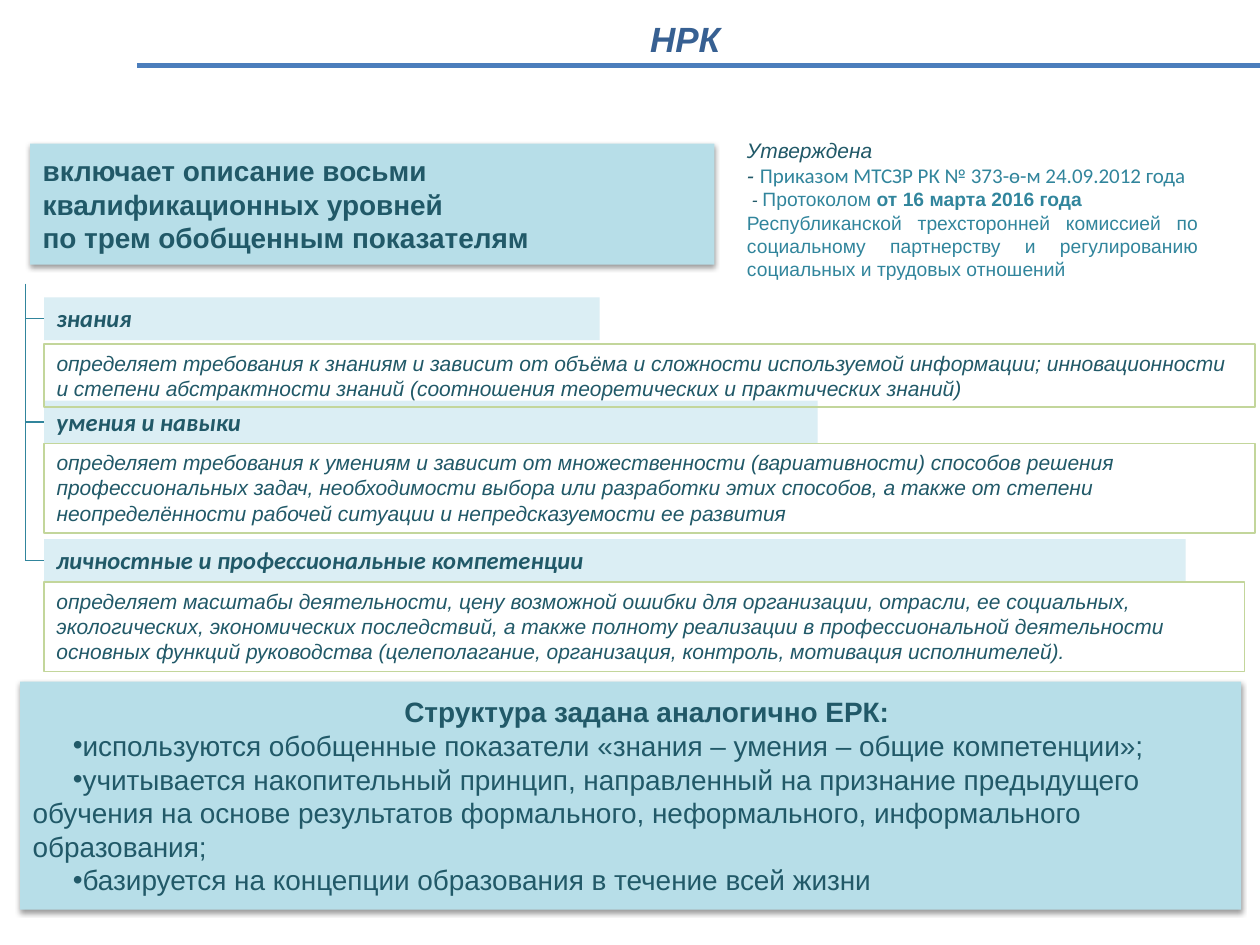
from typing import NamedTuple, Optional

from lxml.etree import SubElement
from pptx import Presentation
from pptx.dml.color import RGBColor
from pptx.enum.shapes import MSO_CONNECTOR, MSO_SHAPE
from pptx.enum.text import MSO_ANCHOR, PP_ALIGN
from pptx.oxml.ns import qn
from pptx.util import Inches, Pt

DARK_TEAL = RGBColor(0x21, 0x59, 0x68)
TEAL = RGBColor(0x31, 0x85, 0x9C)
PANEL = RGBColor(0xB7, 0xDE, 0xE8)
PALE = RGBColor(0xDB, 0xEE, 0xF4)
GREEN = RGBColor(0xC3, 0xD6, 0x9B)
RULE_BLUE = RGBColor(0x4B, 0x7E, 0xBC)
TITLE_BLUE = RGBColor(0x37, 0x60, 0x92)

LEFT, TRUNK_X, HEADER_H = 0.35, 0.2, 0.34


class Box(NamedTuple):
    left: float
    top: float
    width: float
    height: float


class Run(NamedTuple):
    text: str
    size: float
    color: RGBColor = DARK_TEAL
    bold: bool = False
    italic: bool = False
    font: str = "Arial"


class Para(NamedTuple):
    runs: list[Run]
    align: PP_ALIGN = PP_ALIGN.LEFT
    indent: float = 0
    bullet: bool = False


class Indicator(NamedTuple):
    name: str
    header_top: float
    header_width: float
    text: str
    text_top: float
    text_width: float
    text_height: float


INDICATORS = [
    Indicator("знания", 2.36, 4.41,
              "определяет требования к знаниям и зависит от объёма и сложности "
              "используемой информации; инновационности и степени абстрактности "
              "знаний (соотношения теоретических и практических знаний)",
              2.73, 9.61, 0.5),
    Indicator("умения и навыки", 3.18, 6.14,
              "определяет требования к умениям и зависит от множественности "
              "(вариативности) способов решения профессиональных задач, "
              "необходимости выбора или разработки этих способов, а также от "
              "степени неопределённости рабочей ситуации и непредсказуемости ее "
              "развития",
              3.52, 9.61, 0.71),
    Indicator("личностные и профессиональные компетенции", 4.28, 9.06,
              "определяет масштабы деятельности, цену возможной ошибки для "
              "организации, отрасли, ее социальных, экологических, экономических "
              "последствий, а также полноту реализации в профессиональной "
              "деятельности основных функций руководства (целеполагание, "
              "организация, контроль, мотивация исполнителей).",
              4.62, 9.53, 0.71),
]

STRUCTURE_POINTS = [
    "используются обобщенные показатели «знания – умения – общие компетенции»;",
    "учитывается накопительный принцип, направленный на признание предыдущего "
    "обучения на основе результатов формального, неформального, информального "
    "образования;",
    "базируется на концепции образования в течение всей жизни",
]


def write(sp, paras: list[Para], anchor=MSO_ANCHOR.TOP) -> None:
    tf = sp.text_frame
    tf.word_wrap = True
    tf.vertical_anchor = anchor
    for i, para in enumerate(paras):
        p = tf.paragraphs[0] if i == 0 else tf.add_paragraph()
        p.alignment = para.align
        if para.indent:
            pPr = p._p.get_or_add_pPr()
            pPr.set("marL", "0")
            pPr.set("indent", str(Inches(para.indent)))
            if para.bullet:
                SubElement(pPr, qn("a:buFont")).set("typeface", "Arial")
                SubElement(pPr, qn("a:buChar")).set("char", "•")
        for run in para.runs:
            r = p.add_run()
            r.text = run.text
            r.font.size = Pt(run.size)
            r.font.name = run.font
            r.font.bold = run.bold
            r.font.italic = run.italic
            r.font.color.rgb = run.color


def add_text(s, box: Box, paras: list[Para]) -> None:
    write(s.shapes.add_textbox(*map(Inches, box)), paras)


def add_rect(s, box: Box, paras: list[Para], fill: Optional[RGBColor] = None,
             line: Optional[RGBColor] = None, anchor=MSO_ANCHOR.TOP):
    sp = s.shapes.add_shape(MSO_SHAPE.RECTANGLE, *map(Inches, box))
    sp.shadow.inherit = False
    if fill is None:
        sp.fill.background()
    else:
        sp.fill.solid()
        sp.fill.fore_color.rgb = fill
    if line is None:
        sp.line.fill.background()
    else:
        sp.line.color.rgb = line
        sp.line.width = Pt(0.75)
    write(sp, paras, anchor)
    return sp


def add_panel(s, box: Box, paras: list[Para]) -> None:
    """Filled rectangle with a soft shadow below it."""
    sp = add_rect(s, box, paras, PANEL, anchor=MSO_ANCHOR.MIDDLE)
    effects = sp._element.spPr.find(qn("a:effectLst"))
    shadow = SubElement(effects, qn("a:outerShdw"), blurRad=str(Pt(3.1)),
                        dist=str(Pt(1.6)), dir="5400000", rotWithShape="0")
    color = SubElement(shadow, qn("a:srgbClr"), val="000000")
    SubElement(color, qn("a:alpha"), val="38000")


def add_line(s, x1: float, y1: float, x2: float, y2: float,
             color: RGBColor = TEAL, width: float = 0.75):
    line = s.shapes.add_connector(MSO_CONNECTOR.STRAIGHT,
                                  *map(Inches, (x1, y1, x2, y2)))
    line.line.color.rgb = color
    line.line.width = Pt(width)
    SubElement(line._element.spPr, qn("a:effectLst"))
    return line


def main() -> None:
    prs = Presentation()
    prs.slide_width, prs.slide_height = Inches(10), Inches(7.5)
    s = prs.slides.add_slide(prs.slide_layouts[6])

    # Title and rule
    add_line(s, 1.09, 0.52, 10, 0.52, RULE_BLUE, 2.75)
    add_text(s, Box(2.17, 0.09, 6.46, 0.44),
             [Para([Run(" НРК", 20, TITLE_BLUE, True, True)], PP_ALIGN.CENTER)])

    # Introduction and approval
    add_panel(s, Box(0.24, 1.14, 5.43, 0.96), [
        Para([Run("включает описание восьми квалификационных уровней", 16, bold=True)]),
        Para([Run("по трем обобщенным показателям", 16, bold=True)]),
    ])
    approval = [
        [Run("Утверждена ", 12, italic=True)],
        [Run("- ", 12, italic=True),
         Run("Приказом МТСЗР РК № 373-ө-м 24.09.2012 года", 12, TEAL, font="Calibri")],
        [Run(" - ", 10, italic=True), Run("Протоколом ", 11, TEAL),
         Run("от 16 марта 2016 года ", 11, TEAL, True)],
        [Run("Республиканской трехсторонней комиссией по социальному партнерству "
             "и регулированию социальных и трудовых отношений", 11, TEAL)],
    ]
    add_text(s, Box(5.83, 1.04, 3.78, 1.31),
             [Para(runs, PP_ALIGN.JUSTIFY) for runs in approval])

    # Three indicators on a common trunk
    add_line(s, TRUNK_X, 2.25, TRUNK_X, INDICATORS[-1].header_top + HEADER_H / 2)
    for item in INDICATORS:
        header = add_rect(
            s, Box(LEFT, item.header_top, item.header_width, HEADER_H),
            [Para([Run(item.name, 14, bold=True, italic=True, font="Calibri")])], PALE)
        y = item.header_top + HEADER_H / 2
        add_line(s, TRUNK_X, y, LEFT, y).end_connect(header, 1)
    for item in INDICATORS:
        add_rect(s, Box(LEFT, item.text_top, item.text_width, item.text_height),
                 [Para([Run(item.text, 12, italic=True)])], line=GREEN)

    # Structure
    heading = Para([Run("Структура задана аналогично ЕРК: ", 16, bold=True)],
                   PP_ALIGN.CENTER, 0.32)
    points = [Para([Run(t, 16)], indent=0.32, bullet=True) for t in STRUCTURE_POINTS]
    add_panel(s, Box(0.16, 5.41, 9.69, 1.81), [heading, *points])

    prs.save("out.pptx")


if __name__ == "__main__":
    main()
